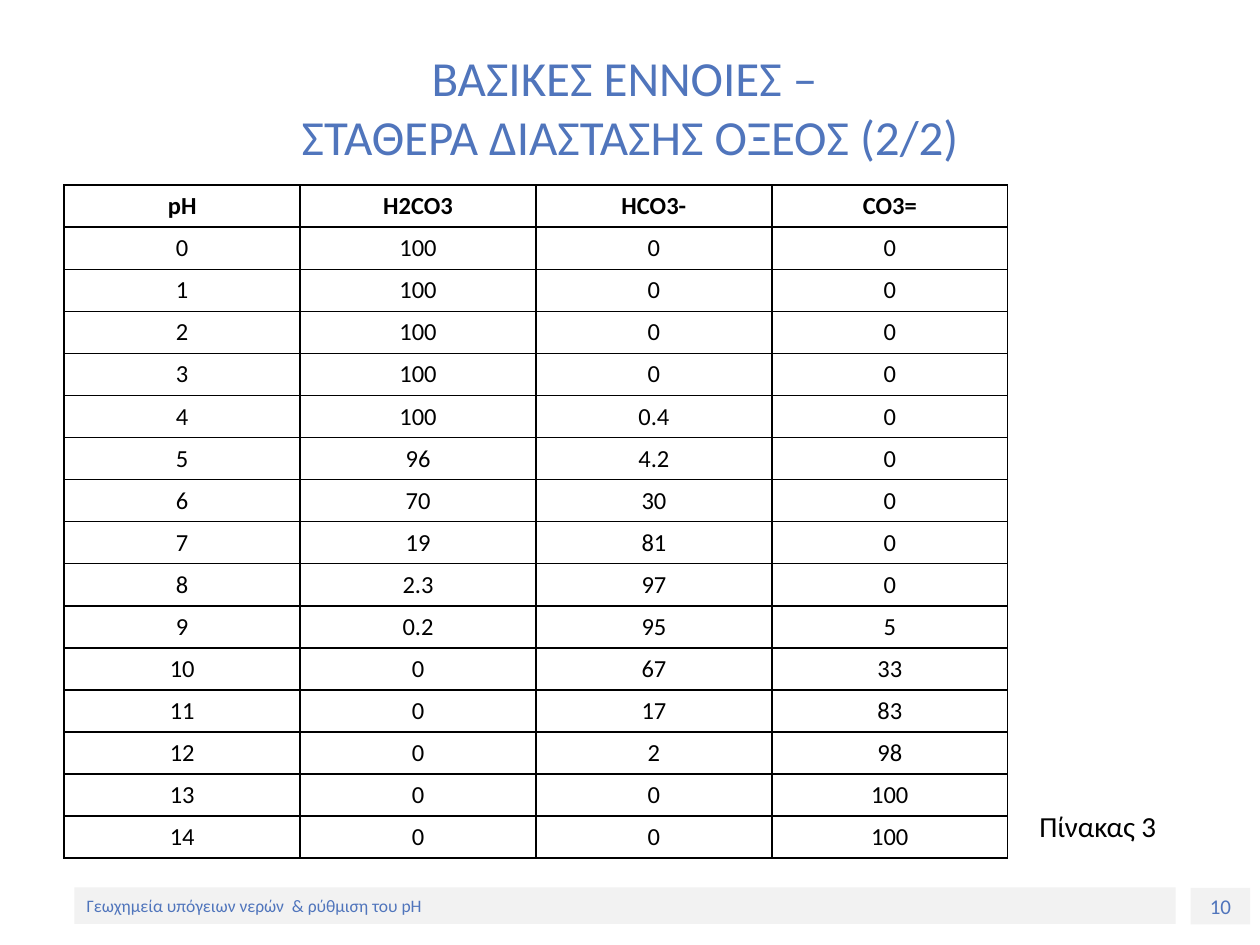
import pptx
import pptx.util
import pptx.dml.color
import pptx.enum.shapes
import pptx.enum.text
import pptx.oxml.ns
import lxml.etree

Pt = pptx.util.Pt
ALIGN = pptx.enum.text.PP_ALIGN
ANCHOR = pptx.enum.text.MSO_ANCHOR
COLORS = {"accent": "5075BC", "panel": "F2F2F2", "ink": "000000", "paper": "FFFFFF"}


class Deck:
    font = "Calibri"

    def __init__(self, width, height):
        self.prs = pptx.Presentation()
        self.prs.slide_width, self.prs.slide_height = Pt(width), Pt(height)
        self.s = self.prs.slides.add_slide(self.prs.slide_layouts[6])

    def color(self, name):
        return pptx.dml.color.RGBColor.from_string(COLORS[name])

    def fill_text(self, tf, text, size, color, align, bold=False):
        tf.text = text
        for p in tf.paragraphs:
            p.alignment = align
            for r in p.runs:
                r.font.name, r.font.size, r.font.bold = self.font, Pt(size), bold
                r.font.color.rgb = self.color(color)

    def text(self, box, text, size, color, align):
        sp = self.s.shapes.add_textbox(*map(Pt, box))
        tf = sp.text_frame
        tf.word_wrap = True
        tf.vertical_anchor = ANCHOR.MIDDLE
        self.fill_text(tf, text, size, color, align)

    def panel(self, box, fill, text, size, color, align):
        sp = self.s.shapes.add_shape(pptx.enum.shapes.MSO_SHAPE.RECTANGLE, *map(Pt, box))
        sp.shadow.inherit = False
        sp.fill.solid()
        sp.fill.fore_color.rgb = self.color(fill)
        sp.line.fill.background()
        tf = sp.text_frame
        tf.word_wrap = True
        tf.vertical_anchor = ANCHOR.MIDDLE
        self.fill_text(tf, text, size, color, align)

    def borders(self, cell, color, width):
        qn = pptx.oxml.ns.qn
        tc_pr = cell._tc.get_or_add_tcPr()
        for side in ("a:lnL", "a:lnR", "a:lnT", "a:lnB"):
            ln = lxml.etree.SubElement(tc_pr, qn(side), w=str(Pt(width)))
            fill = lxml.etree.SubElement(ln, qn("a:solidFill"))
            lxml.etree.SubElement(fill, qn("a:srgbClr"), val=COLORS[color])

    def table(self, left, top, col_width, row_height, rows, size):
        n_rows, n_cols = len(rows), len(rows[0])
        frame = self.s.shapes.add_table(
            n_rows, n_cols, Pt(left), Pt(top), Pt(col_width * n_cols), Pt(row_height * n_rows))
        table = frame.table
        table.horz_banding = False
        for i, row in enumerate(rows):
            for j, value in enumerate(row):
                cell = table.cell(i, j)
                cell.vertical_anchor = ANCHOR.BOTTOM
                self.borders(cell, "ink", 1)
                cell.fill.background()
                self.fill_text(cell.text_frame, str(value), size, "ink", ALIGN.CENTER, bold=i == 0)


def main():
    h2co3 = [100, 100, 100, 100, 100, 96, 70, 19, 2.3, 0.2, 0, 0, 0, 0, 0]
    hco3 = [0, 0, 0, 0, 0.4, 4.2, 30, 81, 97, 95, 67, 17, 2, 0, 0]
    co3 = [0, 0, 0, 0, 0, 0, 0, 0, 0, 5, 33, 83, 98, 100, 100]
    rows = [("pH", "H2CO3", "HCO3-", "CO3="), *zip(range(15), h2co3, hco3, co3)]

    deck = Deck(720, 540)
    deck.panel((680.4, 507.3, 34, 21), "panel", "10", 12, "accent", ALIGN.CENTER)
    deck.panel((42.5, 507, 629.3, 21), "panel",
               "Γεωχημεία υπόγειων νερών  & ρύθμιση του pH", 10, "accent", ALIGN.LEFT)
    deck.text((36, 21.6, 648, 78.5), "ΒΑΣΙΚΕΣ ΕΝΝΟΙΕΣ – \vΣΤΑΘΕΡΑ ΔΙΑΣΤΑΣΗΣ ΟΞΕΟΣ (2/2)",
              28, "accent", ALIGN.CENTER)
    deck.table(36.7, 105.8, 134.8, 24, rows, 14)
    deck.panel((586.8, 458, 85, 27.4), "paper", "Πίνακας 3", 16.6, "ink", ALIGN.LEFT)
    deck.prs.save("out.pptx")


if __name__ == "__main__":
    main()
